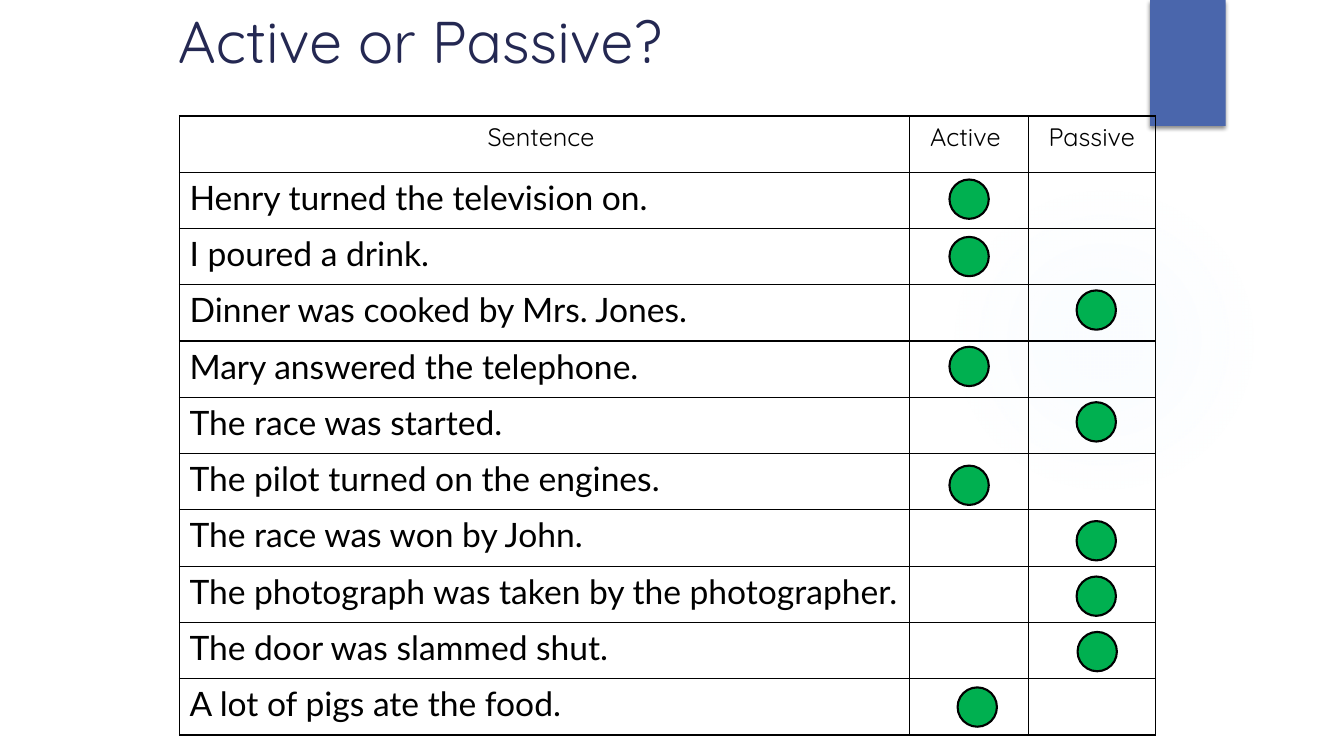
import dataclasses
import typing

import lxml.etree
import pptx
import pptx.dml.color
import pptx.enum.shapes
import pptx.enum.text
import pptx.oxml
import pptx.oxml.ns
import pptx.util

Pt = pptx.util.Pt
SHAPES = pptx.enum.shapes.MSO_SHAPE
CENTER = pptx.enum.text.PP_ALIGN.CENTER
DRAWING = pptx.oxml.ns.nsdecls("a")
COLORS = {
    "ink": "000000",
    "title": "242852",
    "tab": "4A66AC",
    "dot": "00B050",
    "glow": "CDE0FB",
}
TITLE_FORMAT = {"name": "Quicksand", "size": Pt(42), "bold": False}
HEADER_FORMAT = {"name": "Quicksand", "size": Pt(18), "bold": False}
SENTENCE_FORMAT = {"name": "Lato", "size": Pt(24), "bold": False}
HEADERS = ("Sentence ", "Active ", "Passive")
COLUMN_WIDTHS = (521.3, 85, 90.7)
ROW_HEIGHT = 40.2
TABLE_LEFT, TABLE_TOP = 128.2, 82.8
DOT_SIZE = 28.1
ACTIVE_LEFT, PASSIVE_LEFT = 678.2, 769


@dataclasses.dataclass
class Answer:
    sentence: str
    dot_left: float
    dot_top: float


ANSWERS = (
    Answer("Henry turned the television on.", ACTIVE_LEFT, 128.2),
    Answer("I poured a drink.", ACTIVE_LEFT, 169.2),
    Answer("Dinner was cooked by Mrs. Jones.", PASSIVE_LEFT, 207.4),
    Answer("Mary answered the telephone.", ACTIVE_LEFT, 247.7),
    Answer("The race was started.", PASSIVE_LEFT, 287.3),
    Answer("The pilot turned on the engines.", ACTIVE_LEFT, 332.6),
    Answer("The race was won by John.", PASSIVE_LEFT, 372.2),
    Answer("The photograph was taken by the photographer.", PASSIVE_LEFT, 411.8),
    Answer("The door was slammed shut.", PASSIVE_LEFT + 0.7, 451.4),
    Answer("A lot of pigs ate the food.", ACTIVE_LEFT + 5.8, 491),
)


def rgb(color: str) -> pptx.dml.color.RGBColor:
    return pptx.dml.color.RGBColor.from_string(COLORS[color])


def write(frame: typing.Any, text: str, values: dict, color: str = "ink") -> typing.Any:
    para = frame.paragraphs[0]
    span = para.add_run()
    span.text = text
    for name, value in values.items():
        setattr(span.font, name, value)
    span.font.color.rgb = rgb(color)
    return para


def add_block(page: typing.Any, kind: SHAPES, left: float, top: float,
              width: float, height: float, color: str) -> typing.Any:
    block = page.shapes.add_shape(kind, Pt(left), Pt(top), Pt(width), Pt(height))
    block.shadow.inherit = False
    block.fill.solid()
    block.fill.fore_color.rgb = rgb(color)
    block.line.fill.background()
    return block


def add_glow(page: typing.Any) -> None:
    glow = add_block(page, SHAPES.OVAL, 677.5, 131.8, 221.8, 221.8, "glow")
    stops = "".join(
        f'<a:gs pos="{position * 1000}"><a:srgbClr val="{COLORS["glow"]}">'
        f'<a:alpha val="{alpha * 1000}"/></a:srgbClr></a:gs>'
        for position, alpha in ((0, 7), (36, 6), (69, 0))
    )
    gradient = pptx.oxml.parse_xml(
        f'<a:gradFill {DRAWING}><a:gsLst>{stops}</a:gsLst><a:path path="circle">'
        '<a:fillToRect l="50000" t="50000" r="50000" b="50000"/></a:path></a:gradFill>'
    )
    properties = glow.element.spPr
    solid = properties.find(pptx.oxml.ns.qn("a:solidFill"))
    properties.replace(solid, gradient)


def add_corner_tab(page: typing.Any) -> None:
    tab = add_block(page, SHAPES.RECTANGLE, 821.5, 0, 54, 90, "tab")
    effects = tab.element.spPr.find(pptx.oxml.ns.qn("a:effectLst"))
    effects.append(pptx.oxml.parse_xml(
        f'<a:outerShdw {DRAWING} blurRad="{Pt(3)}" dist="{Pt(2)}" dir="5400000" '
        f'rotWithShape="0"><a:srgbClr val="{COLORS["ink"]}"><a:alpha val="45000"/>'
        '</a:srgbClr></a:outerShdw>'
    ))


def add_title(page: typing.Any) -> None:
    box = page.shapes.add_textbox(Pt(120), Pt(0), Pt(720), Pt(90))
    box.text_frame.word_wrap = True
    write(box.text_frame, "Active or Passive?", TITLE_FORMAT, "title")


def style_cell(cell: typing.Any) -> None:
    cell.fill.background()
    properties = cell._tc.get_or_add_tcPr()
    for index, side in enumerate(("lnL", "lnR", "lnT", "lnB")):
        properties.insert(index, pptx.oxml.parse_xml(
            f'<a:{side} {DRAWING} w="{Pt(1)}"><a:solidFill>'
            f'<a:srgbClr val="{COLORS["ink"]}"/></a:solidFill></a:{side}>'
        ))


def add_answer_table(page: typing.Any) -> None:
    row_count = len(ANSWERS) + 1
    table = page.shapes.add_table(
        row_count, len(HEADERS), Pt(TABLE_LEFT), Pt(TABLE_TOP),
        Pt(sum(COLUMN_WIDTHS)), Pt(ROW_HEIGHT * row_count),
    ).table
    table.first_row = False
    table.horz_banding = False
    for column, width in zip(table.columns, COLUMN_WIDTHS):
        column.width = Pt(width)
    for row in table.rows:
        row.height = Pt(ROW_HEIGHT)
    for cell in table.iter_cells():
        style_cell(cell)
    for index, header in enumerate(HEADERS):
        para = write(table.cell(0, index).text_frame, header, HEADER_FORMAT)
        para.alignment = CENTER
    for index, answer in enumerate(ANSWERS, start=1):
        write(table.cell(index, 0).text_frame, answer.sentence, SENTENCE_FORMAT)


def add_dot(page: typing.Any, answer: Answer) -> None:
    dot = add_block(page, SHAPES.OVAL, answer.dot_left, answer.dot_top,
                    DOT_SIZE, DOT_SIZE, "dot")
    dot.line.color.rgb = rgb("ink")
    dot.line.width = Pt(1.5)


def main() -> None:
    deck = pptx.Presentation()
    deck.slide_width, deck.slide_height = Pt(960), Pt(540)
    page = deck.slides.add_slide(deck.slide_layouts[6])
    add_glow(page)
    add_corner_tab(page)
    add_title(page)
    add_answer_table(page)
    for answer in ANSWERS:
        add_dot(page, answer)
    deck.save("out.pptx")


if __name__ == "__main__":
    main()
